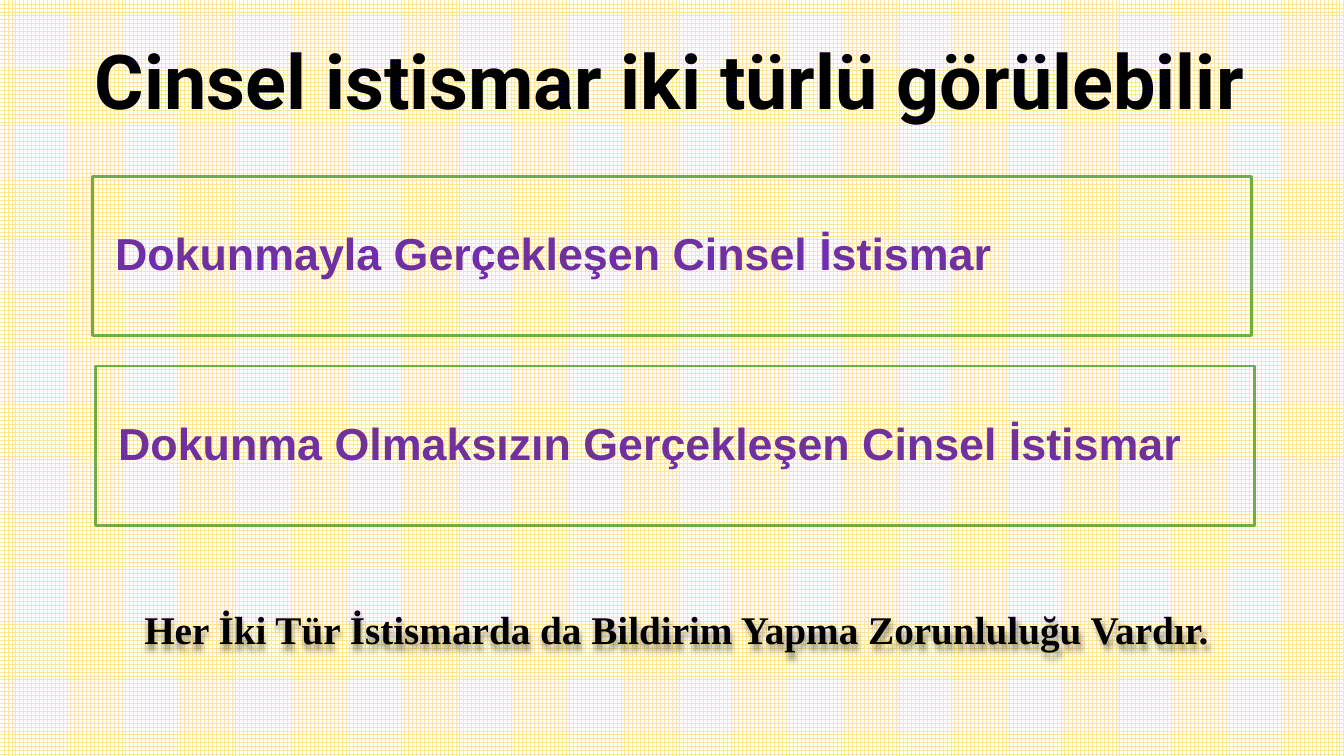
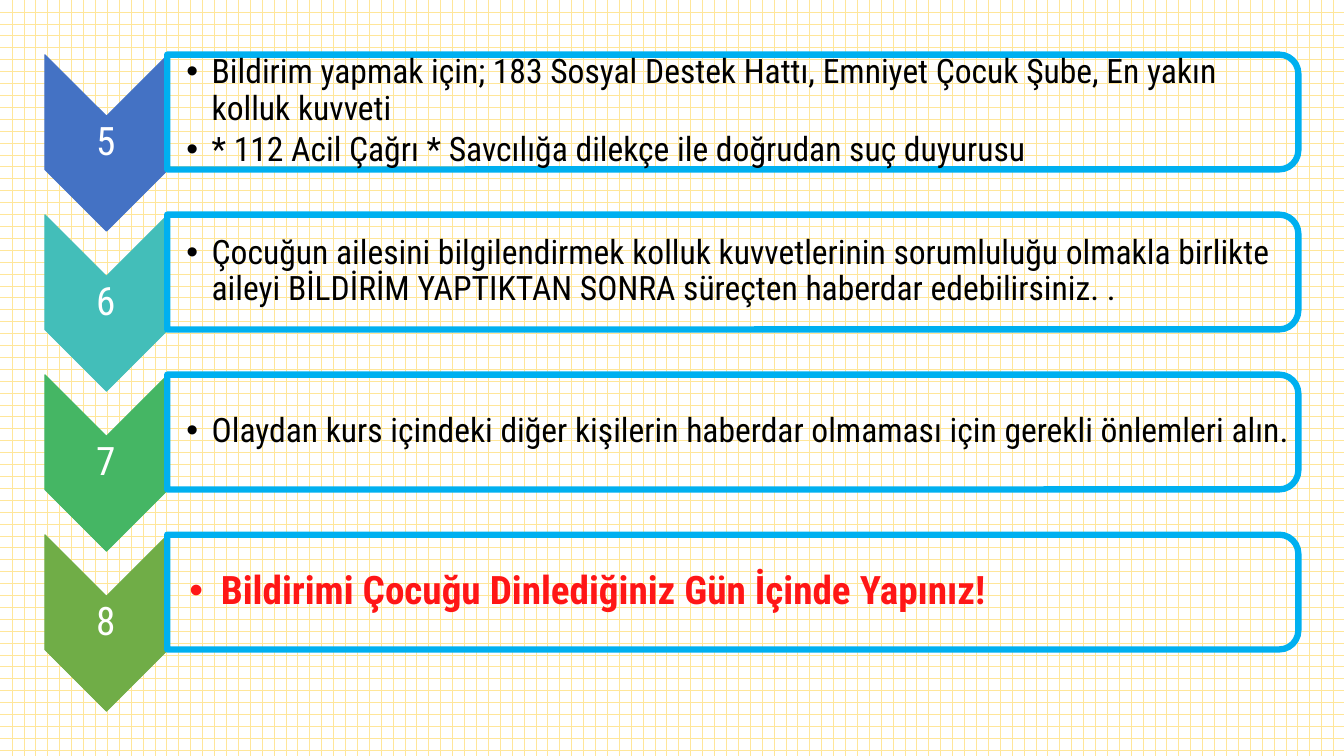
from pptx import Presentation
from pptx.dml.color import RGBColor
from pptx.enum import dml, shapes, text
from pptx.oxml import parse_xml
from pptx.oxml.ns import nsdecls
from pptx.util import Pt

COLORS = {
    "grid": "FFE699", "white": "FFFFFF", "black": "000000",
    "frame": "70AD47", "purple": "7030A0", "bar": "00B0F0",
    "red": "FF1616", "blue": "4472C4", "teal": "43BEB9", "green": "45B664",
}
TITLE = "Cinsel istismar iki türlü görülebilir"
NOTE = "Her İki Tür İstismarda da Bildirim Yapma Zorunluluğu Vardır."
KINDS = [
    (66.2, 126, "Dokunmayla Gerçekleşen Cinsel İstismar"),
    (68.4, 261.4, "Dokunma Olmaksızın Gerçekleşen Cinsel İstismar"),
]
STEPS = [
    ("5", "blue", "step", [
        "Bildirim yapmak için; 183 Sosyal Destek Hattı, Emniyet Çocuk Şube, En yakın kolluk kuvveti",
        "* 112 Acil Çağrı * Savcılığa dilekçe ile doğrudan suç duyurusu"]),
    ("6", "teal", "step", [
        "Çocuğun ailesini bilgilendirmek kolluk kuvvetlerinin sorumluluğu olmakla birlikte "
        "aileyi BİLDİRİM YAPTIKTAN SONRA süreçten haberdar edebilirsiniz. ."]),
    ("7", "green", "step", [
        "Olaydan kurs içindeki diğer kişilerin haberdar olmaması için gerekli önlemleri alın."]),
    ("8", "frame", "alert", ["Bildirimi Çocuğu Dinlediğiniz Gün İçinde Yapınız!"]),
]
PITCH = 114.3
MID = text.MSO_ANCHOR.MIDDLE
TOP = text.MSO_ANCHOR.TOP
CENTER = text.PP_ALIGN.CENTER
LEFT = text.PP_ALIGN.LEFT
SHAPE = shapes.MSO_SHAPE

STYLES = {
    "title": dict(font=("Roboto", 54, True, "black"), align=CENTER, anchor=MID,
                  pads=(7.2, 3.6, 7.2, 3.6), line=0.9, after=0),
    "note": dict(font=("Times New Roman", 28, True, "black"), align=CENTER, anchor=TOP,
                 pads=(7.2, 3.6, 7.2, 3.6), line=1.0, after=0),
    "kind": dict(font=("Arial", 32, True, "purple"), align=LEFT, anchor=MID,
                 pads=(16, 16, 16, 16), line=0.9, after=11),
    "digit": dict(font=("Roboto Condensed", 28, False, "white"), align=CENTER, anchor=MID,
                  pads=(1.4, 1.4, 1.4, 1.4), line=0.9, after=10),
    "step": dict(font=("Roboto Condensed", 24, False, "black"), align=LEFT, anchor=MID,
                 pads=(13.7, 1.4, 1.4, 1.4), line=0.9, after=3.6, hang=18),
    "alert": dict(font=("Roboto Condensed", 28, True, "red"), align=LEFT, anchor=MID,
                  pads=(15.8, 1.4, 1.4, 1.4), line=0.9, after=4.2, hang=22.5),
}


def rgb(name):
    return RGBColor.from_string(COLORS[name])


def add_slide(deck, pattern):
    slide = deck.slides.add_slide(deck.slide_layouts[6])
    fill = slide.background.fill
    fill.patterned()
    fill.pattern = pattern
    fill.fore_color.rgb = rgb("grid")
    fill.back_color.rgb = rgb("white")
    return slide


def add_bullet(para, hang):
    props = para._p.get_or_add_pPr()
    props.set("marL", str(Pt(hang)))
    props.set("indent", str(-Pt(hang)))
    for tag in ('buFont {} typeface="Arial"', 'buChar {} char="•"'):
        props.append(parse_xml("<a:" + tag.format(nsdecls("a")) + "/>"))


def write(shape, lines, style):
    look = STYLES[style]
    frame = shape.text_frame
    sides = ("left", "top", "right", "bottom")
    for side, pad in zip(sides, look["pads"]):
        setattr(frame, "margin_" + side, Pt(pad))
    frame.word_wrap = True
    frame.vertical_anchor = look["anchor"]
    name, size, bold, color = look["font"]
    for i, line in enumerate(lines):
        para = frame.paragraphs[0] if i == 0 else frame.add_paragraph()
        form = dict(alignment=look["align"], line_spacing=look["line"],
                    space_after=Pt(look["after"]))
        for key, value in form.items():
            setattr(para, key, value)
        if "hang" in look:
            add_bullet(para, look["hang"])
        run = para.add_run()
        run.text = line
        for key, value in dict(name=name, size=Pt(size), bold=bold).items():
            setattr(run.font, key, value)
        run.font.color.rgb = rgb(color)


def add_text(slide, box, lines, style):
    shape = slide.shapes.add_textbox(*map(Pt, box))
    write(shape, lines, style)
    return shape


def add_shape(slide, kind, box, line, width, fill=None, turn=0):
    shape = slide.shapes.add_shape(kind, *map(Pt, box))
    shape.shadow.inherit = False
    shape.rotation = turn
    shape.line.color.rgb = rgb(line)
    shape.line.width = Pt(width)
    if fill:
        shape.fill.solid()
        shape.fill.fore_color.rgb = rgb(fill)
    else:
        shape.fill.background()
    return shape


def add_glow(shape):
    shape._element.spPr.append(parse_xml(
        f'<a:effectLst {nsdecls("a")}>'
        '<a:outerShdw blurRad="50800" dist="38100" dir="5400000" algn="t" rotWithShape="0">'
        '<a:srgbClr val="000000"><a:alpha val="40000"/></a:srgbClr>'
        '</a:outerShdw></a:effectLst>'))


def build_kinds(deck):
    slide = add_slide(deck, dml.MSO_PATTERN.LARGE_GRID)
    add_text(slide, (18.7, 23, 919.4, 74.9), [TITLE], "title")
    add_glow(add_text(slide, (90, 429.1, 786.2, 41), [NOTE], "note"))
    for left, top, label in KINDS:
        card = add_shape(slide, SHAPE.RECTANGLE, (left, top, 828, 113.8), "frame", 2)
        write(card, [label], "kind")


def build_steps(deck):
    slide = add_slide(deck, dml.MSO_PATTERN.HORIZONTAL_BRICK)
    for i, (digit, color, style, lines) in enumerate(STEPS):
        y = i * PITCH
        add_shape(slide, SHAPE.CHEVRON, (13, 58.2 + y, 126, 87.8),
                  color, 0.75, color, 90)
        add_text(slide, (31.7, 83.4 + y, 87.8, 37.4), [digit], "digit")
        add_shape(slide, SHAPE.ROUND_2_SAME_RECTANGLE, (482.4, -324 + y, 82, 808),
                  "bar", 4.5, turn=90)
        add_text(slide, (119.5, 43.2 + y, 803.5, 73.4), lines, style)


def main():
    deck = Presentation()
    deck.slide_width, deck.slide_height = Pt(960), Pt(540)
    build_kinds(deck)
    build_steps(deck)
    deck.save("out.pptx")


if __name__ == "__main__":
    main()
